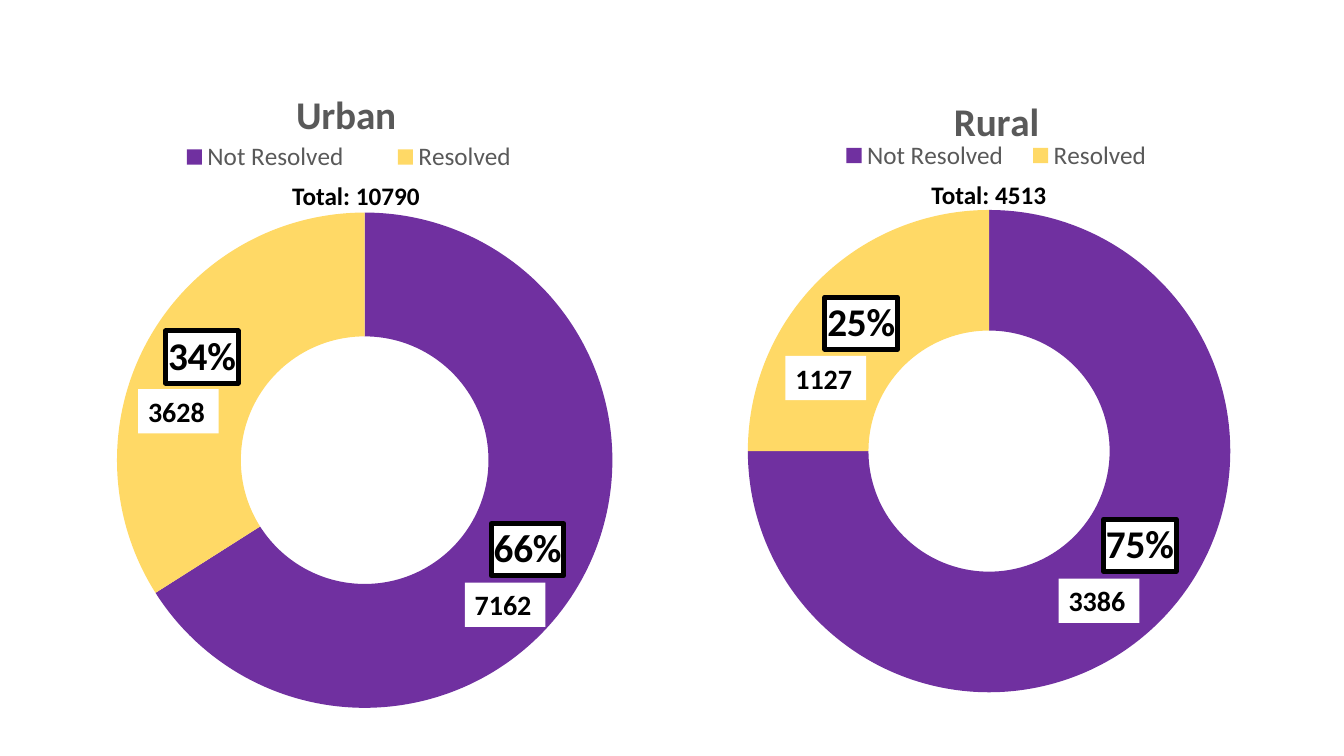
from copy import deepcopy
from dataclasses import dataclass

from lxml import etree
from pptx import Presentation
from pptx.chart.data import CategoryChartData
from pptx.dml.color import RGBColor
from pptx.enum.chart import XL_CHART_TYPE, XL_LEGEND_POSITION
from pptx.enum.shapes import MSO_SHAPE
from pptx.enum.text import MSO_ANCHOR, PP_ALIGN
from pptx.oxml import parse_xml
from pptx.oxml.ns import qn
from pptx.util import Inches, Pt

DOUGHNUT = XL_CHART_TYPE.DOUGHNUT
LEGEND_TOP = XL_LEGEND_POSITION.TOP
RECT = MSO_SHAPE.RECTANGLE
MIDDLE = MSO_ANCHOR.MIDDLE
LEFT = PP_ALIGN.LEFT

FONT = "Calibri"
COLORS = {"not_resolved": "7030A0", "resolved": "FFD966", "grey": "595959",
          "black": "000000", "white": "FFFFFF"}
CATEGORIES = {"Not Resolved": "not_resolved", "Resolved": "resolved"}
BOX_XML = (
    '<c:spPr xmlns:c="http://schemas.openxmlformats.org/drawingml/2006/chart" '
    'xmlns:a="http://schemas.openxmlformats.org/drawingml/2006/main">'
    f'<a:solidFill><a:srgbClr val="{COLORS["white"]}"/></a:solidFill>'
    f'<a:ln w="44450"><a:solidFill><a:srgbClr val="{COLORS["black"]}"/></a:solidFill></a:ln>'
    '</c:spPr>')


@dataclass
class Count:
    text: str
    left: float
    top: float


@dataclass
class Area:
    name: str
    box: tuple          # inches: left, top, width, height
    percents: tuple
    title: tuple        # layouts are fractions of the chart: x, y, w, h
    legend: tuple
    plot: tuple
    moved_point: int    # point whose label is shifted
    label_shift: tuple
    total: Count
    counts: tuple


AREAS = [
    Area("Rural", (6.14, 0.74, 7.56, 6.69), (75, 25),
         (0.43, 0.02), (0.27, 0.09, 0.45, 0.06), (0.169, 0.193, 0.633, 0.731),
         0, (0.03, -0.05), Count("Total: 4513", 9.14, 1.73),
         (Count("1127", 7.79, 3.53), Count("3386", 10.5, 5.74))),
    Area("Urban", (0, 0.67, 6.99, 6.83), (66, 34),
         (0.41, 0.02), (0.2, 0.1, 0.59, 0.06), (0.166, 0.18, 0.703, 0.781),
         1, (0, -0.02), Count("Total: 10790", 2.8, 1.74),
         (Count("3628", 1.37, 3.86), Count("7162", 4.61, 5.78))),
]


def style_font(font, size: float, color: str = "black", bold: bool = False) -> None:
    font.name, font.size, font.bold = FONT, Pt(size), bold
    font.color.rgb = RGBColor.from_string(COLORS[color])


def set_layout(parent, index: int, values: tuple, edge: bool = True) -> None:
    """Give a chart part a manual layout, as child number index."""
    for old in parent.findall(qn("c:layout")):
        parent.remove(old)
    layout = etree.Element(qn("c:layout"))
    manual = etree.SubElement(layout, qn("c:manualLayout"))
    settings = []
    if parent.tag == qn("c:plotArea"):
        settings.append(("layoutTarget", "inner"))
    if edge:
        settings += [("xMode", "edge"), ("yMode", "edge")]
    settings += zip("xywh", values)
    for tag, value in settings:
        etree.SubElement(manual, qn(f"c:{tag}")).set("val", str(value))
    parent.insert(index, layout)


def add_labels(series, area: Area) -> None:
    """Boxed percentages, one of them shifted from its usual place."""
    labels = series.data_labels
    style_font(labels.font, 28, bold=True)
    labels.show_percentage, labels.show_value = True, False
    d_lbls = labels._element
    d_lbls.find(qn("c:txPr")).addprevious(parse_xml(BOX_XML))

    moved = etree.Element(qn("c:dLbl"))
    etree.SubElement(moved, qn("c:idx")).set("val", str(area.moved_point))
    for child in d_lbls:
        if child.tag != qn("c:showLeaderLines"):
            moved.append(deepcopy(child))
    set_layout(moved, 1, area.label_shift, edge=False)
    d_lbls.insert(0, moved)


def add_doughnut(s, area: Area) -> None:
    data = CategoryChartData()
    data.categories = list(CATEGORIES)
    data.add_series(area.name, area.percents)
    chart = s.shapes.add_chart(DOUGHNUT, *map(Inches, area.box), data).chart
    style_font(chart.font, 10)

    chart.has_title = True
    tf = chart.chart_title.text_frame
    tf.text = area.name
    style_font(tf.paragraphs[0].runs[0].font, 28, "grey", True)
    set_layout(chart.chart_title._element, 1, area.title)

    chart.has_legend = True
    chart.legend.position = LEGEND_TOP
    chart.legend.include_in_layout = False
    style_font(chart.legend.font, 18, "grey")
    set_layout(chart.legend._element, 1, area.legend)
    set_layout(chart._chartSpace.chart.plotArea, 0, area.plot)

    series = chart.plots[0].series[0]
    for i, color in enumerate(CATEGORIES.values()):
        fmt = series.points[i].format
        fmt.fill.solid()
        fmt.fill.fore_color.rgb = RGBColor.from_string(COLORS[color])
        fmt.line.fill.background()
    add_labels(series, area)


def add_text(s, count: Count, *, width: float, height: float, size: float,
             fill: str = "") -> None:
    box = tuple(map(Inches, (count.left, count.top, width, height)))
    if fill:
        sp = s.shapes.add_shape(RECT, *box)
        sp.shadow.inherit = False
        sp.fill.solid()
        sp.fill.fore_color.rgb = RGBColor.from_string(COLORS[fill])
        sp.line.fill.background()
    else:
        sp = s.shapes.add_textbox(*box)
    tf = sp.text_frame
    tf.word_wrap = True
    tf.vertical_anchor = MIDDLE
    p = tf.paragraphs[0]
    p.alignment = LEFT
    r = p.add_run()
    r.text = count.text
    style_font(r.font, size, bold=True)


def main() -> None:
    prs = Presentation()
    prs.slide_width, prs.slide_height = Inches(13.33), Inches(7.5)
    s = prs.slides.add_slide(prs.slide_layouts[6])

    # Doughnut charts
    for area in AREAS:
        add_doughnut(s, area)

    # Totals above the rings and counts on them
    for area in AREAS:
        add_text(s, area.total, width=1.82, height=0.4, size=18)
        for count in area.counts:
            add_text(s, count, width=0.8, height=0.44, size=20, fill="white")

    prs.save("out.pptx")


if __name__ == "__main__":
    main()
